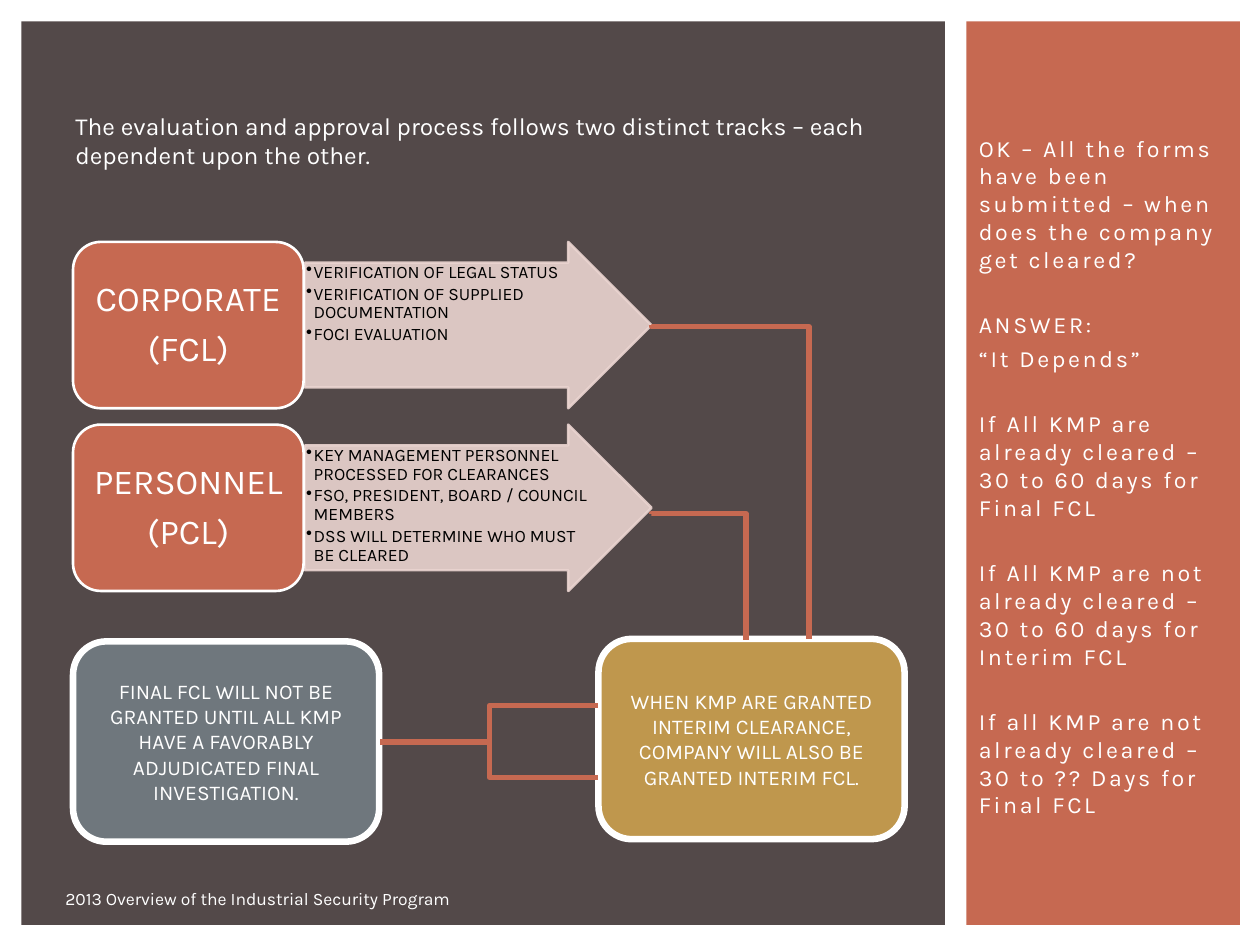
from dataclasses import dataclass
from typing import Optional

import pptx
import pptx.dml.color
import pptx.enum.shapes
import pptx.enum.text
import pptx.oxml.ns
import pptx.util
from lxml import etree

Inches = pptx.util.Inches
Pt = pptx.util.Pt
qn = pptx.oxml.ns.qn
Shape = pptx.enum.shapes.MSO_SHAPE
Align = pptx.enum.text.PP_ALIGN
Anchor = pptx.enum.text.MSO_ANCHOR


@dataclass(frozen=True)
class Theme:
    font: str = "Karla"
    white: str = "FFFFFF"
    black: str = "000000"
    dark: str = "534949"
    rust: str = "C66951"
    blush: str = "EAD4D0"
    gold: str = "BF974D"
    slate: str = "6F777D"
    small: float = 10
    box: float = 12
    sidebar: float = 13.3
    intro: float = 14
    track: float = 20


THEME = Theme()


@dataclass(frozen=True)
class Area:
    left: float
    top: float
    width: float
    height: float

    def lengths(self) -> list:
        return [Inches(v) for v in (self.left, self.top, self.width, self.height)]


@dataclass(frozen=True)
class Style:
    size: float
    color: str = THEME.white
    align: Align = Align.LEFT
    anchor: Anchor = Anchor.TOP
    insets: tuple = (0.1, 0.05, 0.1, 0.05)
    spacing: Optional[float] = None
    after: float = 0
    bullet: bool = False
    tracking: float = 0


@dataclass(frozen=True)
class Track:
    top: float
    title: list
    steps: list


@dataclass(frozen=True)
class Outcome:
    area: Area
    fill: str
    text: str


@dataclass(frozen=True)
class Elbow:
    start: tuple
    end: tuple
    bend: float
    downward: bool = False


INTRO = Style(THEME.intro)
FOOTER = Style(THEME.small)
SIDEBAR = Style(THEME.sidebar, anchor=Anchor.MIDDLE, insets=(0.1, 0.05, 0.1, 0.53), tracking=1.5)
TITLE = Style(THEME.track, align=Align.CENTER, anchor=Anchor.MIDDLE,
              insets=(0.08, 0.04, 0.08, 0.04), spacing=0.9, after=7)
STEPS = Style(THEME.small, THEME.black, insets=(0.01, 0.01, 0.01, 0.01),
              spacing=0.9, after=1.5, bullet=True)
OUTCOME = Style(THEME.box, align=Align.CENTER, anchor=Anchor.MIDDLE)

TRACKS = [
    Track(1.92, ["CORPORATE", "(FCL)"],
          ["VERIFICATION OF LEGAL STATUS", "VERIFICATION OF SUPPLIED DOCUMENTATION", "FOCI EVALUATION"]),
    Track(3.37, ["PERSONNEL", "(PCL)"],
          ["KEY MANAGEMENT PERSONNEL PROCESSED FOR CLEARANCES",
           "FSO, PRESIDENT, BOARD / COUNCIL MEMBERS",
           "DSS WILL DETERMINE WHO MUST BE CLEARED"]),
]
OUTCOMES = [
    Outcome(Area(4.75, 5.07, 2.43, 1.59), THEME.gold,
            "WHEN KMP ARE GRANTED INTERIM CLEARANCE, COMPANY WILL ALSO BE GRANTED INTERIM FCL."),
    Outcome(Area(0.58, 5.09, 2.43, 1.59), THEME.slate,
            "FINAL FCL WILL NOT BE GRANTED UNTIL ALL KMP HAVE A FAVORABLY ADJUDICATED FINAL INVESTIGATION."),
]
ELBOWS = [
    Elbow((5.17, 2.58), (6.42, 5.07), 0.005, True),
    Elbow((5.17, 4.08), (5.92, 5.08), -0.005, True),
    Elbow((3.02, 5.89), (4.75, 5.6), 0.5),
    Elbow((3.02, 5.89), (4.75, 6.17), 0.5),
]
TIGHT, LOOSE = 3, 21.3
ANSWERS = [
    ("OK – All the forms have been submitted – when does the company get cleared?", TIGHT),
    ("ANSWER:", LOOSE),
    ("“It Depends”", TIGHT),
    ("If All KMP are already cleared – 30 to 60 days for Final FCL", LOOSE),
    ("If All KMP are not already cleared – 30 to 60 days for Interim FCL", LOOSE),
    ("If all KMP are not already cleared – 30 to ?? Days for Final FCL", LOOSE),
]


def rgb(color: str) -> pptx.dml.color.RGBColor:
    return pptx.dml.color.RGBColor.from_string(color)


def write(sp, lines: list, style: Style, before: Optional[list] = None) -> None:
    tf = sp.text_frame
    tf.word_wrap = True
    tf.vertical_anchor = style.anchor
    tf.margin_left, tf.margin_top, tf.margin_right, tf.margin_bottom = map(Inches, style.insets)
    for i, line in enumerate(lines):
        p = tf.add_paragraph() if i else tf.paragraphs[0]
        p.alignment = style.align
        p.space_before = Pt(before[i] if before else 0)
        p.space_after = Pt(style.after)
        if style.spacing:
            p.line_spacing = style.spacing
        if style.bullet:
            pPr = p._p.get_or_add_pPr()
            pPr.set("marL", str(Inches(0.06)))
            pPr.set("indent", str(Inches(-0.06)))
            etree.SubElement(pPr, qn("a:buChar")).set("char", "•")
        r = p.add_run()
        r.text = line
        r.font.name = THEME.font
        r.font.size = Pt(style.size)
        r.font.color.rgb = rgb(style.color)
        if style.tracking:
            r._r.get_or_add_rPr().set("spc", str(int(style.tracking * 100)))


def add_block(s, kind: Shape, area: Area, fill: str, line: Optional[str] = None,
              width: float = 0, opacity: Optional[int] = None):
    sp = s.shapes.add_shape(kind, *area.lengths())
    sp.shadow.inherit = False
    sp.fill.solid()
    sp.fill.fore_color.rgb = rgb(fill)
    if line:
        sp.line.color.rgb = rgb(line)
        sp.line.width = Pt(width)
    else:
        sp.line.fill.background()
    if opacity:
        for color in sp._element.spPr.iter(qn("a:srgbClr")):
            etree.SubElement(color, qn("a:alpha")).set("val", str(opacity * 1000))
    return sp


def add_text(s, area: Area, lines: list, style: Style, before: Optional[list] = None) -> None:
    write(s.shapes.add_textbox(*area.lengths()), lines, style, before)


def add_track(s, track: Track) -> None:
    arrow = add_block(s, Shape.RIGHT_ARROW, Area(2.42, track.top, 2.75, 1.32),
                      THEME.blush, THEME.blush, 1.5, 90)
    arrow.adjustments[0] = 0.75
    add_text(s, Area(2.42, track.top + 0.16, 2.25, 0.99), track.steps, STEPS)
    label = add_block(s, Shape.ROUNDED_RECTANGLE, Area(0.58, track.top, 1.83, 1.32),
                      THEME.rust, THEME.white, 1.5)
    write(label, track.title, TITLE)


def add_elbow(s, elbow: Elbow) -> None:
    (x1, y1), (x2, y2) = elbow.start, elbow.end
    if elbow.downward:
        cx, cy = (x1 + x2) / 2, (y1 + y2) / 2
        half_w, half_h = (y2 - y1) / 2, (x2 - x1) / 2
        x1, y1, x2, y2 = cx + half_w, cy - half_h, cx - half_w, cy + half_h
    line = s.shapes.add_connector(pptx.enum.shapes.MSO_CONNECTOR.ELBOW,
                                  *map(Inches, (x1, y1, x2, y2)))
    line.line.color.rgb = rgb(THEME.rust)
    line.line.width = Pt(3)
    spPr = line._element.spPr
    if elbow.downward:
        spPr.find(qn("a:xfrm")).set("rot", str(270 * 60000))
    guide = etree.SubElement(spPr.find(qn("a:prstGeom")).find(qn("a:avLst")), qn("a:gd"))
    guide.set("name", "adj1")
    guide.set("fmla", f"val {round(elbow.bend * 100000)}")
    etree.SubElement(spPr, qn("a:effectLst"))


def main() -> None:
    prs = pptx.Presentation()
    prs.slide_width, prs.slide_height = Inches(10), Inches(7.5)
    s = prs.slides.add_slide(prs.slide_layouts[6])
    add_block(s, Shape.RECTANGLE, Area(7.67, 0.17, 2.17, 7.17), THEME.rust)
    add_block(s, Shape.RECTANGLE, Area(0.17, 0.17, 7.33, 7.17), THEME.dark)
    add_text(s, Area(0.42, 7, 5.75, 0.27), ["2013 Overview of the Industrial Security Program"], FOOTER)
    lines, before = zip(*ANSWERS)
    add_text(s, Area(7.67, 1.62, 2.17, 4.8), lines, SIDEBAR, before)
    add_text(s, Area(0.5, 0.83, 6.67, 0.57),
             ["The evaluation and approval process follows two distinct tracks – each dependent upon the other."],
             INTRO)
    for track in TRACKS:
        add_track(s, track)
    for outcome in OUTCOMES:
        box = add_block(s, Shape.ROUNDED_RECTANGLE, outcome.area, outcome.fill, THEME.white, 3.75)
        write(box, [outcome.text], OUTCOME)
    for elbow in ELBOWS:
        add_elbow(s, elbow)
    prs.save("out.pptx")


if __name__ == "__main__":
    main()
